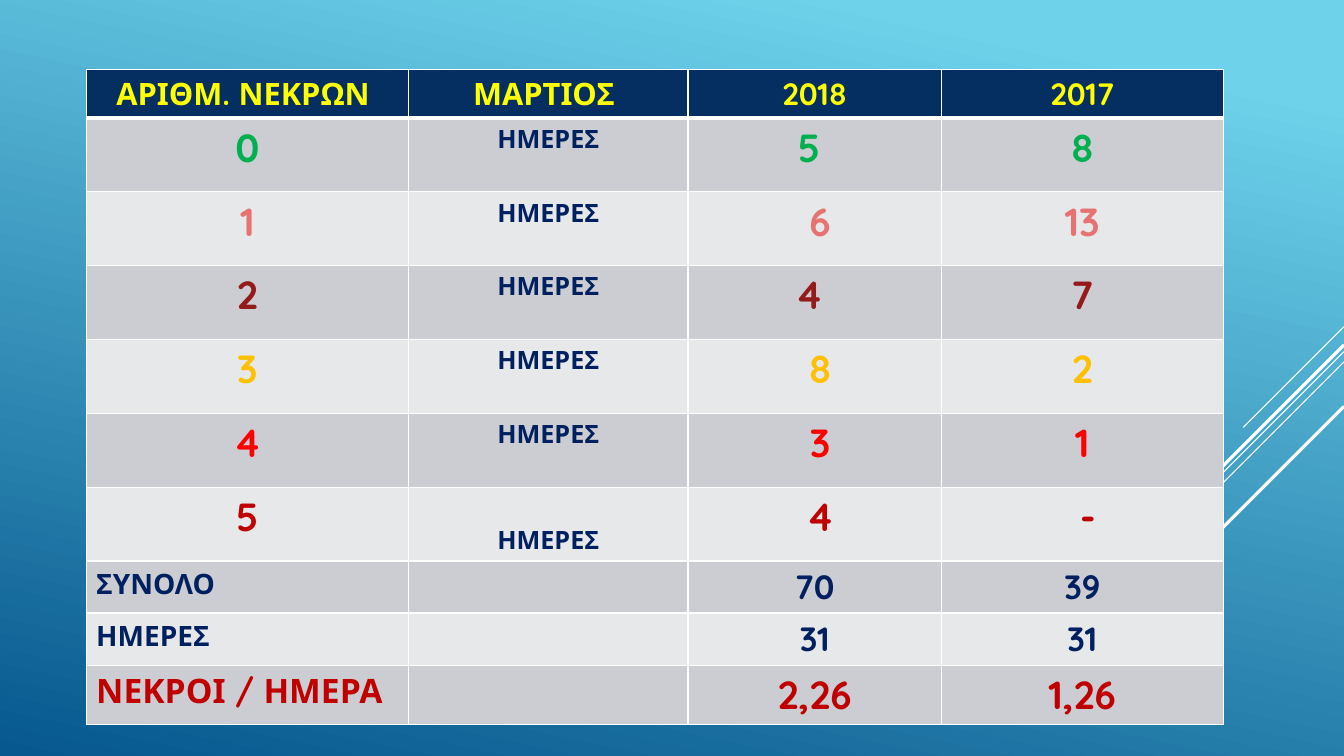
"""Builds a slide with a table of road deaths per day in March."""
from lxml.etree import SubElement as Sub
from pptx import Presentation
from pptx.dml.color import RGBColor as Rgb
from pptx.enum.shapes import MSO_CONNECTOR as Conn
from pptx.enum.text import MSO_ANCHOR as Anchor, PP_ALIGN as Align
from pptx.oxml.ns import qn
from pptx.util import Cm, Pt

FONT = "Quicksand"
WIDE, HIGH = 33.87, 19.05
INK = {
    "white": "FFFFFF", "sky": "6ED2EB", "deep": "06588E", "head": "052F61",
    "odd": "CCCDD2", "even": "E7E8EA", "yellow": "FFFF00", "navy": "002060",
    "green": "00B050", "pink": "E67272", "wine": "941A1B", "gold": "FFC000",
    "red": "FF0000", "dark": "C00000",
}
COLS = [8.13, 7.04, 6.38, 7.11]
ROWS = [1.21] + [1.86] * 6 + [1.31, 1.31, 1.49]
RAYS = [(8.23, 2.54, 0.75), (8.86, 8.28, 0.75), (9.12, 5.26, 0.75),
        (8.69, 4.85, 2.25), (10.24, 3.53, 2.25)]
HEADS = ["ΑΡΙΘΜ. ΝΕΚΡΩΝ ", "ΜΑΡΤΙΟΣ ", "2018", "2017"]
DAYS = [("0", "5 ", "8", "green"), ("1", " 6", "13", "pink"),
        ("2", "4 ", "7", "wine"), ("3", " 8", "2", "gold"),
        ("4", " 3", "1", "red"), ("5", " 4", " -", "dark")]
SUMS = [("ΣΥΝΟΛΟ", "70", "39", 20, 24, "navy"),
        ("ΗΜΕΡΕΣ", "31", "31", 20, 24, "navy"),
        ("ΝΕΚΡΟΙ / ΗΜΕΡΑ", "2,26", "1,26", 24, 28, "dark")]


def tint(name):
    """Return the named colour."""
    return Rgb.from_string(INK[name])


def paint(slide):
    """Fill the background with the blue gradient."""
    fill = slide.background.fill
    fill.gradient()
    fill.gradient_angle = 258
    for stop, name, pos in zip(fill.gradient_stops, ("sky", "deep"), (0.1, 1)):
        stop.color.rgb = tint(name)
        stop.position = pos


def ray(slide, top, size, width):
    """Draw a diagonal line down from the right edge."""
    line = slide.shapes.add_connector(
        Conn.STRAIGHT, Cm(WIDE), Cm(top), Cm(WIDE - size), Cm(top + size))
    line.line.color.rgb = tint("white")
    line.line.width = Pt(width)
    Sub(line._element.spPr, qn("a:effectLst"))


def write(cell, text, size=28, ink="navy", align=Align.CENTER):
    """Put bold text into a cell."""
    para = cell.text_frame.paragraphs[0]
    para.alignment = align
    run = para.add_run()
    run.text = text
    font = run.font
    font.name, font.size, font.bold = FONT, Pt(size), True
    font.color.rgb = tint(ink)


def edge(cell, side, width):
    """Draw one white border of a cell."""
    line = Sub(cell._tc.get_or_add_tcPr(), qn("a:ln" + side), w=str(Pt(width)))
    Sub(Sub(line, qn("a:solidFill")), qn("a:srgbClr"), val=INK["white"])


def frame(slide):
    """Add the table with its sizes, borders and fills."""
    table = slide.shapes.add_table(
        len(ROWS), len(COLS), Cm(2.17), Cm(1.75),
        Cm(sum(COLS)), Cm(sum(ROWS))).table
    for col, width in zip(table.columns, COLS):
        col.width = Cm(width)
    for num, (row, height) in enumerate(zip(table.rows, ROWS)):
        row.height = Cm(height)
        for cell in row.cells:
            for side in "LRTB":
                thick = (num, side) in ((0, "B"), (1, "T"))
                edge(cell, side, 3 if thick else 1)
            cell.fill.solid()
            name = "odd" if num % 2 else "even"
            cell.fill.fore_color.rgb = tint(name if num else "head")
    return table


def fill_in(table):
    """Write the heads, the day counts and the sums."""
    for col, text in enumerate(HEADS):
        write(table.cell(0, col), text, size=22, ink="yellow")
    for row, (dead, now, past, ink) in enumerate(DAYS, 1):
        for col, text in ((0, dead), (2, now), (3, past)):
            write(table.cell(row, col), text, ink=ink)
        write(table.cell(row, 1), "ΗΜΕΡΕΣ", size=18)
    table.cell(len(DAYS), 1).vertical_anchor = Anchor.BOTTOM
    for row, (label, now, past, small, big, ink) in enumerate(SUMS, 7):
        write(table.cell(row, 0), label, size=small, ink=ink, align=Align.LEFT)
        for col, text in ((2, now), (3, past)):
            write(table.cell(row, col), text, size=big, ink=ink)


def main():
    """Build and save the slide."""
    deck = Presentation()
    deck.slide_width, deck.slide_height = Cm(WIDE), Cm(HIGH)
    slide = deck.slides.add_slide(deck.slide_layouts[6])
    paint(slide)
    for top, size, width in RAYS:
        ray(slide, top, size, width)
    fill_in(frame(slide))
    deck.save("out.pptx")


if __name__ == "__main__":
    main()
